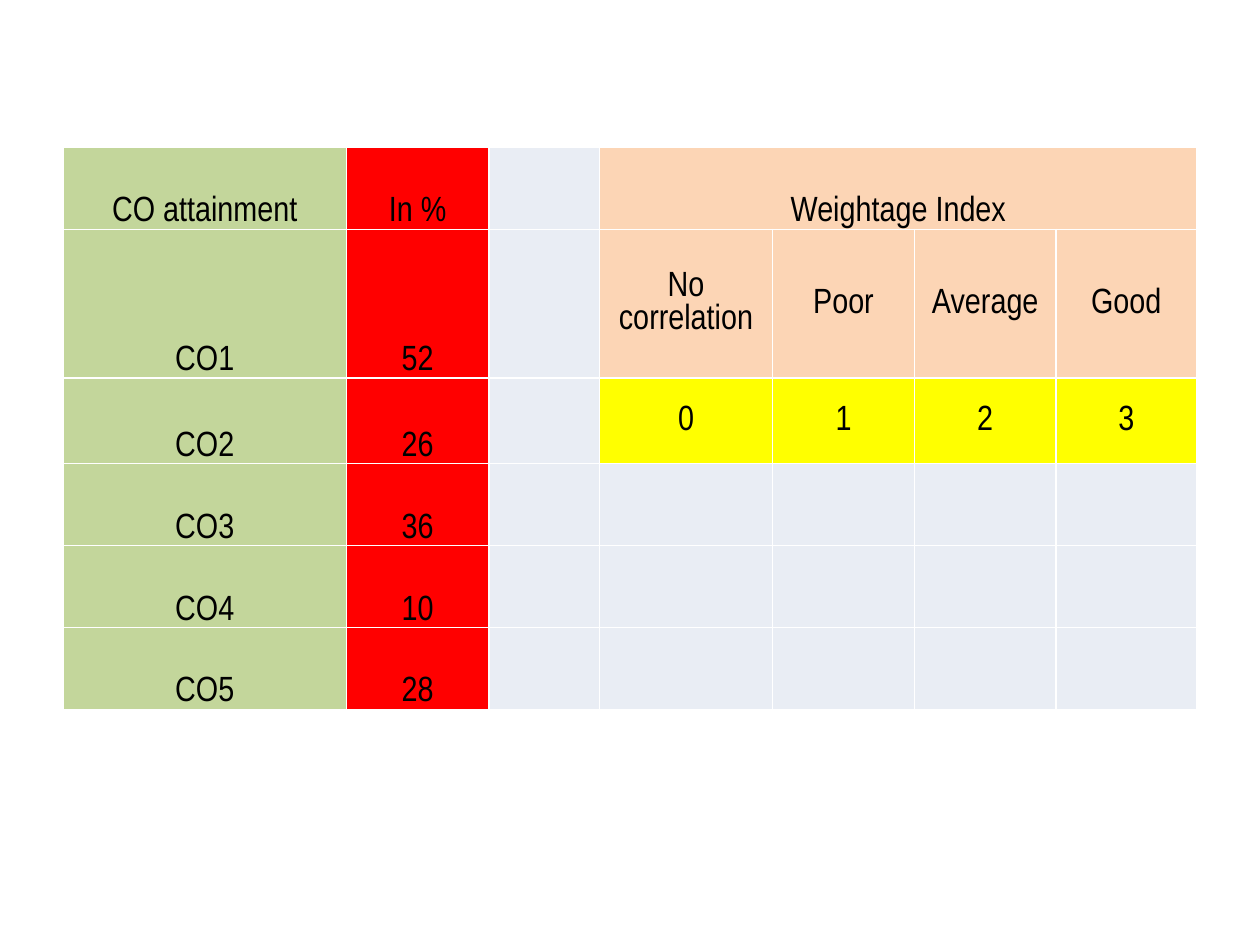
from lxml.etree import SubElement
from pptx import Presentation
from pptx.dml.color import RGBColor
from pptx.enum.text import MSO_ANCHOR, PP_ALIGN
from pptx.oxml.ns import qn
from pptx.util import Inches, Pt

COLORS = {
    "outcome": "C3D69B",
    "percent": "FF0000",
    "empty": "E9EDF4",
    "heading": "FCD5B5",
    "index": "FFFF00",
    "border": "FFFFFF",
    "text": "000000",
}
FONT = {"name": "Arial Narrow", "size": Pt(20), "bold": False}
CELL = {
    "margin_left": Inches(0.01),
    "margin_top": Inches(0.01),
    "margin_right": Inches(0.01),
    "margin_bottom": Inches(0),
}
COLUMN_WIDTHS = [2.25, 1.13, 0.88, 1.37, 1.13, 1.12, 1.12]
ROW_HEIGHTS = [0.65, 1.18, 0.68, 0.65, 0.65, 0.65]

ATTAINMENT = [
    ("CO attainment", "In %"),
    ("CO1", "52"),
    ("CO2", "26"),
    ("CO3", "36"),
    ("CO4", "10"),
    ("CO5", "28"),
]
WEIGHTAGE = [
    ("Weightage Index", "", "", ""),
    ("No correlation", "Poor", "Average", "Good"),
    ("0", "1", "2", "3"),
]
WEIGHTAGE_FILLS = ["heading", "heading", "index"]
WEIGHTAGE_COLUMN = 3


def set_borders(cell):
    properties = cell._tc.get_or_add_tcPr()
    for side in ("a:lnL", "a:lnR", "a:lnT", "a:lnB"):
        line = SubElement(properties, qn(side), w=str(Pt(1)))
        fill = SubElement(line, qn("a:solidFill"))
        SubElement(fill, qn("a:srgbClr"), val=COLORS["border"])


def format_cell(cell, text, color, anchor):
    for name, value in CELL.items():
        setattr(cell, name, value)
    cell.vertical_anchor = anchor
    set_borders(cell)
    cell.fill.solid()
    cell.fill.fore_color.rgb = RGBColor.from_string(COLORS[color])

    cell.text = text
    paragraph = cell.text_frame.paragraphs[0]
    paragraph.alignment = PP_ALIGN.CENTER
    for name, value in FONT.items():
        setattr(paragraph.font, name, value)
    paragraph.font.color.rgb = RGBColor.from_string(COLORS["text"])


def add_attainment_table(slide, left, top, width, height):
    table = slide.shapes.add_table(
        len(ROW_HEIGHTS), len(COLUMN_WIDTHS), left, top, width, height
    ).table
    table.first_row = table.horz_banding = False
    for column, share in zip(table.columns, COLUMN_WIDTHS):
        column.width = int(width * share / sum(COLUMN_WIDTHS))
    for row, share in zip(table.rows, ROW_HEIGHTS):
        row.height = int(height * share / sum(ROW_HEIGHTS))

    for row_index, (outcome, percent) in enumerate(ATTAINMENT):
        # Course outcomes, percentages and the spacer column
        left_cells = [(outcome, "outcome"), (percent, "percent"), ("", "empty")]
        for column_index, (text, color) in enumerate(left_cells):
            cell = table.cell(row_index, column_index)
            format_cell(cell, text, color, MSO_ANCHOR.BOTTOM)

        # Weightage index, with empty cells below it
        filled = row_index < len(WEIGHTAGE)
        texts = WEIGHTAGE[row_index] if filled else [""] * 4
        color = WEIGHTAGE_FILLS[row_index] if filled else "empty"
        anchor = MSO_ANCHOR.MIDDLE if row_index else MSO_ANCHOR.BOTTOM
        for column_index, text in enumerate(texts, WEIGHTAGE_COLUMN):
            format_cell(table.cell(row_index, column_index), text, color, anchor)

    # Weightage heading spans its four columns
    last_column = len(COLUMN_WIDTHS) - 1
    table.cell(0, WEIGHTAGE_COLUMN).merge(table.cell(0, last_column))


def main():
    presentation = Presentation()
    presentation.slide_width = Inches(10)
    presentation.slide_height = Inches(7.5)
    slide = presentation.slides.add_slide(presentation.slide_layouts[6])
    add_attainment_table(slide, Inches(0.5), Inches(1.17), Inches(9), Inches(4.46))
    presentation.save("out.pptx")


if __name__ == "__main__":
    main()
